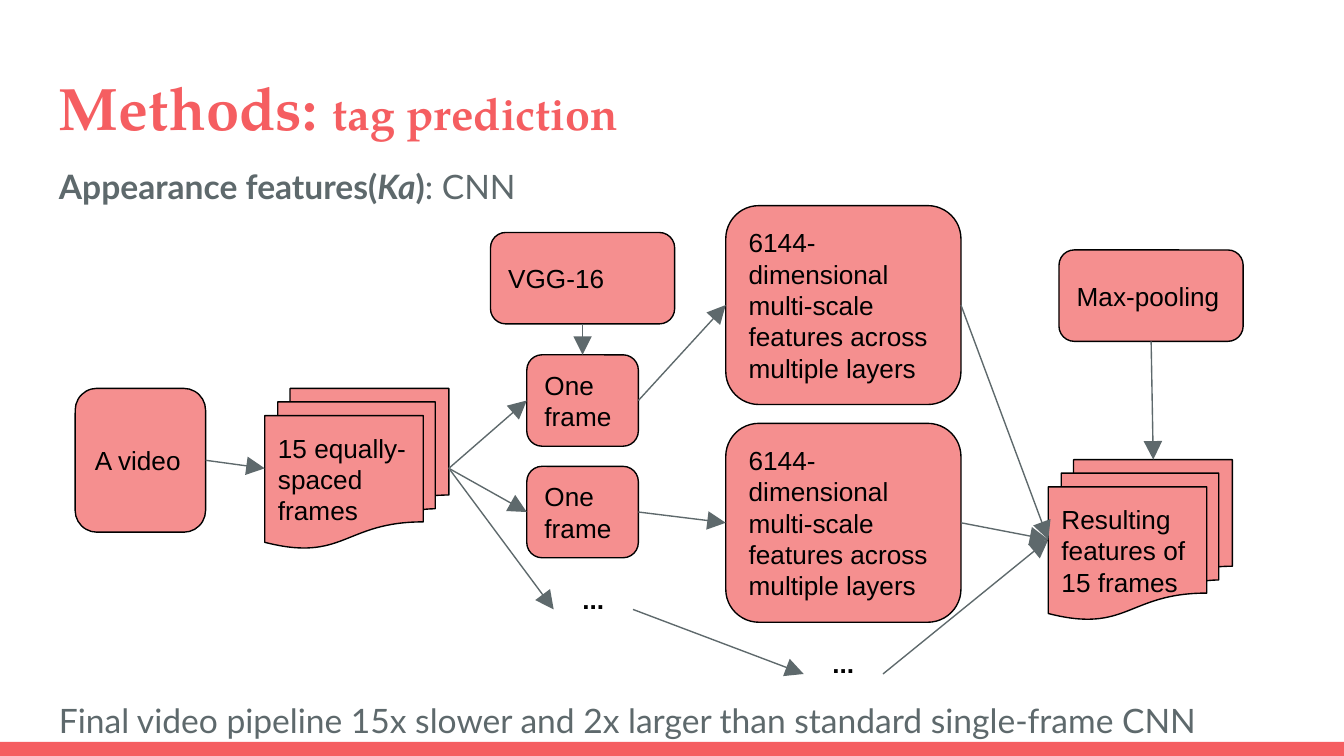
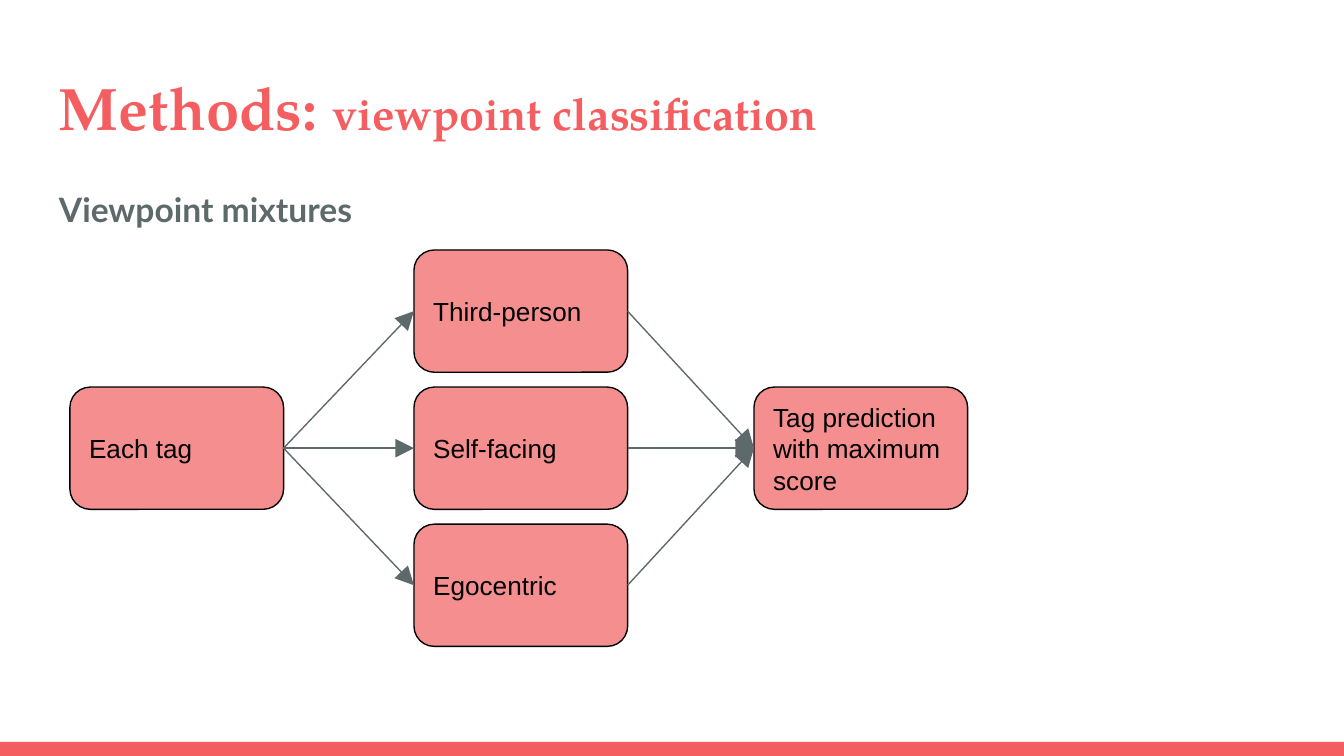
from lxml import etree
from pptx import Presentation
from pptx.dml.color import RGBColor
from pptx.enum.shapes import MSO_CONNECTOR, MSO_SHAPE
from pptx.enum.text import MSO_ANCHOR, PP_ALIGN
from pptx.oxml.ns import qn
from pptx.util import Inches, Pt

STRAIGHT = MSO_CONNECTOR.STRAIGHT
RECTANGLE = MSO_SHAPE.RECTANGLE
PROCESS = MSO_SHAPE.FLOWCHART_ALTERNATE_PROCESS
STACK = MSO_SHAPE.FLOWCHART_MULTIDOCUMENT
TOP, MIDDLE = MSO_ANCHOR.TOP, MSO_ANCHOR.MIDDLE
LEFT, CENTER = PP_ALIGN.LEFT, PP_ALIGN.CENTER
SIDE_TOP, SIDE_LEFT, SIDE_BOTTOM, SIDE_RIGHT = range(4)

COLORS = {"accent": "F55E61", "node": "F58F8F", "ink": "000000", "gray": "5E696C"}
FONTS = {"title": "TeX Gyre Pagella", "body": "Lato", "node": "Arial"}
PAGE_WIDTH = 10
PAGE_SIZE = (PAGE_WIDTH, PAGE_WIDTH * 9 / 16)
BAND = (0, 5.52, PAGE_WIDTH, 0.11)
TITLE_AREA = (0.34, 0.43, 9.32, 0.68)
INSET = 0.1
STACK_TOP_SITE = 0.57

SMALL, FRAME, FEATURE, PILE = (1.37, 0.68), (0.83, 0.68), (1.75, 1.48), (1.37, 1.19)
DOTS, CHOICE = (0.59, 0.59), (1.59, 0.91)
FEATURE_TEXT = "6144-dimensional multi-scale features across\nmultiple layers"
TAG_X, VIEW_X, RESULT_X = 0.52, 3.08, 5.61
VIEW_TOP, VIEW_STEP = 1.86, 1.02
VIEWS = ["Third-person", "Self-facing", "Egocentric"]
CENTER_Y = VIEW_TOP + VIEW_STEP

SLIDES = [
    {
        "topic": "tag prediction",
        "body_area": (0.34, 1.09, 9.32, 3.8),
        "body": [
            (0, [("Appearance features(", True, False), ("Ka", True, True),
                 (")", True, False), (": CNN", False, False)]),
            (245, [("Final video pipeline 15x slower and 2x larger than "
                    "standard single-frame CNN", False, False)]),
        ],
        "nodes": {
            "video": (PROCESS, (0.56, 2.89), (0.97, 1.07), "A video"),
            "frames": (STACK, (1.97, 2.89), PILE, "15 equally-spaced\nframes"),
            "network": (PROCESS, (3.65, 1.73), SMALL, "VGG-16"),
            "frame 1": (PROCESS, (3.92, 2.64), FRAME, "One frame"),
            "features 1": (PROCESS, (5.4, 1.53), FEATURE, FEATURE_TEXT),
            "frame 2": (PROCESS, (3.92, 3.47), FRAME, "One frame"),
            "features 2": (PROCESS, (5.4, 3.15), FEATURE, FEATURE_TEXT),
            "result": (STACK, (7.8, 3.42), PILE, "Resulting features of 15 frames"),
            "pooling": (PROCESS, (7.88, 1.86), SMALL, "Max-pooling"),
            "more frames": (None, (4.12, 4.24), DOTS, "..."),
            "more features": (None, (5.98, 4.72), DOTS, "..."),
        },
        "across": [
            ("video", "frames"),
            ("frames", "frame 1"),
            ("frames", "frame 2"),
            ("frames", "more frames"),
            ("frame 1", "features 1"),
            ("frame 2", "features 2"),
            ("more frames", "more features"),
            ("features 2", "result"),
            ("features 1", "result"),
        ],
        "down": [("network", "frame 1"), ("pooling", "result")],
        "behind": [("more features", "result")],
    },
    {
        "topic": "viewpoint classification",
        "body_area": (0.34, 1.26, 9.32, 3.74),
        "body": [(0, [("Viewpoint mixtures", True, False)])],
        "nodes": {
            **{view: (PROCESS, (VIEW_X, VIEW_TOP + row * VIEW_STEP), CHOICE, view)
               for row, view in enumerate(VIEWS)},
            "result": (PROCESS, (RESULT_X, CENTER_Y), CHOICE,
                       "Tag prediction with maximum score"),
            "tag": (PROCESS, (TAG_X, CENTER_Y), CHOICE, "Each tag"),
        },
        "across": [("tag", view) for view in VIEWS]
                  + [(view, "result") for view in VIEWS],
        "down": [],
        "behind": [],
    },
]


def rgb(name):
    return RGBColor.from_string(COLORS[name])


def inches(values):
    return [Inches(value) for value in values]


def set_frame(box, anchor):
    frame = box.text_frame
    frame.word_wrap = True
    frame.vertical_anchor = anchor
    frame.margin_left = frame.margin_right = Inches(INSET)
    frame.margin_top = frame.margin_bottom = Inches(INSET)
    return frame


def next_para(frame, index):
    return frame.add_paragraph() if index else frame.paragraphs[0]


def add_span(para, text, role, size, color, bold=False, italic=False):
    span = para.add_run()
    span.text = text
    font = span.font
    font.name, font.size = FONTS[role], Pt(size)
    font.bold, font.italic = bold, italic
    font.color.rgb = rgb(color)


def add_filled(page, kind, area, color):
    box = page.shapes.add_shape(kind, *inches(area))
    box.shadow.inherit = False
    box.fill.solid()
    box.fill.fore_color.rgb = rgb(color)
    return box


def add_band(page):
    band = add_filled(page, RECTANGLE, BAND, "accent")
    band.line.fill.background()
    return band


def add_title(page, topic):
    box = page.shapes.add_textbox(*inches(TITLE_AREA))
    para = set_frame(box, TOP).paragraphs[0]
    add_span(para, "Methods: ", "title", 32, "accent", True)
    add_span(para, topic, "title", 24, "accent", True)


def add_body(page, area, paragraphs):
    frame = set_frame(page.shapes.add_textbox(*inches(area)), TOP)
    for index, (gap, spans) in enumerate(paragraphs):
        para = next_para(frame, index)
        para.line_spacing = 1.15
        para.space_before, para.space_after = Pt(gap), Pt(16)
        for text, bold, italic in spans:
            add_span(para, text, "body", 18, "gray", bold, italic)


def add_node(page, kind, place, size, text):
    area = (*place, *size)
    if kind is None:
        box = page.shapes.add_textbox(*inches(area))
    else:
        box = add_filled(page, kind, area, "node")
        box.line.color.rgb = rgb("ink")
        box.line.width = Pt(0.75)
    frame = set_frame(box, MIDDLE if kind else TOP)
    for index, line in enumerate(text.split("\n")):
        para = next_para(frame, index)
        para.alignment = LEFT if kind else CENTER
        add_span(para, line, "node", 14, "ink", bold=kind is None)
    return box


def add_arrow(page, source, target, source_side, target_side):
    arrow = page.shapes.add_connector(STRAIGHT, 0, 0, 0, 0)
    arrow.begin_connect(source, source_side)
    arrow.end_connect(target, target_side)
    arrow.line.color.rgb = rgb("gray")
    arrow.line.width = Pt(0.75)
    properties = arrow.element.spPr
    etree.SubElement(properties.find(qn("a:ln")), qn("a:tailEnd"),
                     type="triangle", w="lg", len="lg")
    etree.SubElement(properties, qn("a:effectLst"))
    return arrow


def build_slide(deck, content):
    page = deck.slides.add_slide(deck.slide_layouts[6])
    band = add_band(page)
    add_title(page, content["topic"])
    add_body(page, content["body_area"], content["body"])
    nodes = {name: add_node(page, *node) for name, node in content["nodes"].items()}
    for start, end in content["across"]:
        add_arrow(page, nodes[start], nodes[end], SIDE_RIGHT, SIDE_LEFT)
    for start, end in content["down"]:
        target = nodes[end]
        arrow = add_arrow(page, nodes[start], target, SIDE_BOTTOM, SIDE_TOP)
        if content["nodes"][end][0] == STACK:
            arrow.end_x = target.left + int(target.width * STACK_TOP_SITE)
    for start, end in content["behind"]:
        arrow = add_arrow(page, nodes[start], nodes[end], SIDE_RIGHT, SIDE_LEFT)
        band.element.addnext(arrow.element)


def main():
    deck = Presentation()
    deck.slide_width, deck.slide_height = inches(PAGE_SIZE)
    for content in SLIDES:
        build_slide(deck, content)
    deck.save("out.pptx")


if __name__ == "__main__":
    main()
